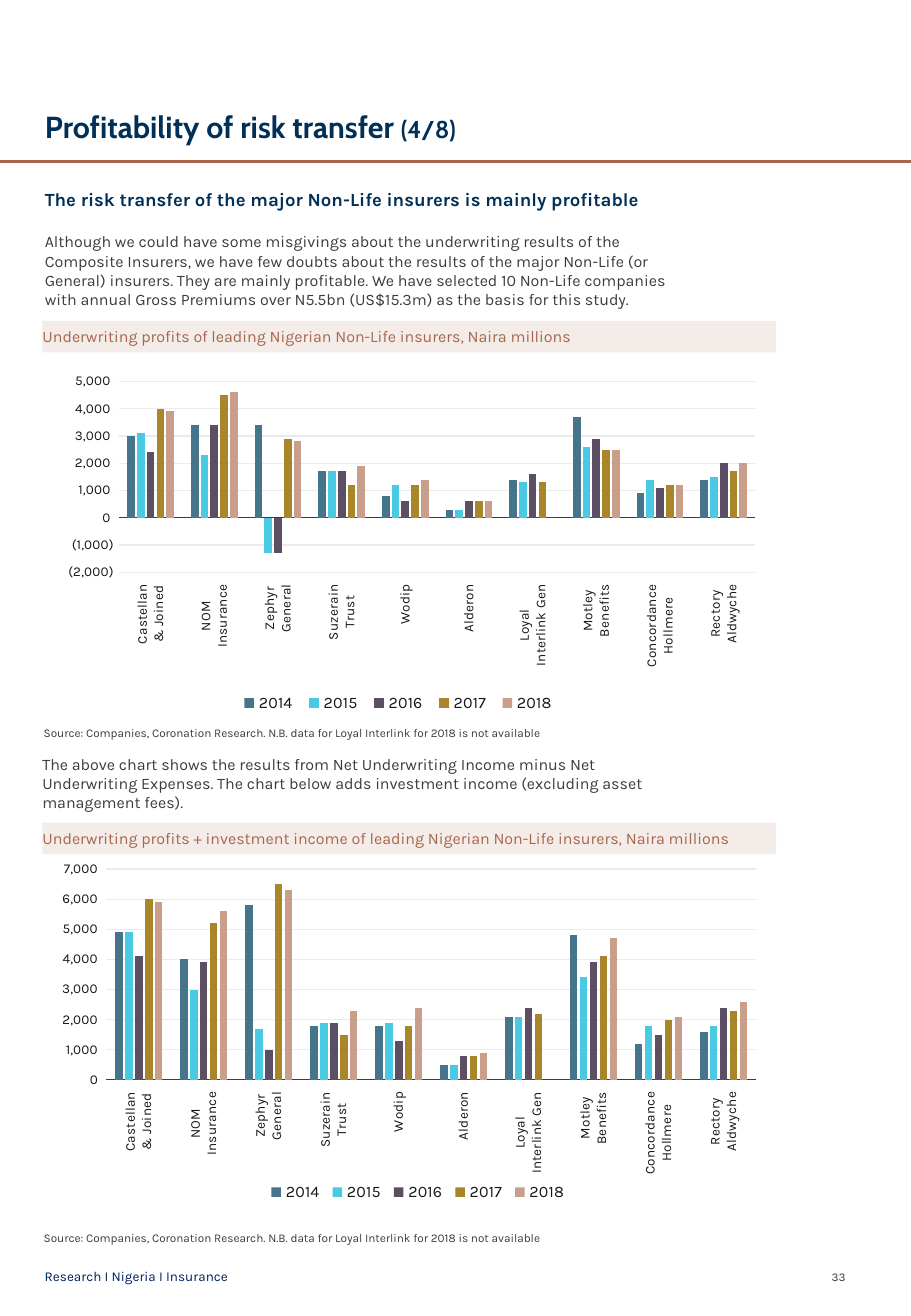
from dataclasses import dataclass
from typing import Optional

from lxml.etree import SubElement
from pptx import Presentation
from pptx.chart.data import CategoryChartData
from pptx.dml.color import RGBColor
from pptx.enum.chart import (XL_CHART_TYPE, XL_LEGEND_POSITION, XL_TICK_LABEL_POSITION,
                             XL_TICK_MARK)
from pptx.enum.shapes import MSO_CONNECTOR, MSO_SHAPE
from pptx.enum.text import MSO_ANCHOR, MSO_AUTO_SIZE, PP_ALIGN
from pptx.oxml.ns import qn
from pptx.util import Inches, Pt

NAVY, COPPER, BLUSH = "003057", "A7674C", "F4ECE8"
GREY, BLACK, GRID = "3A3C3E", "161617", "EAEBEB"
YEARS = ["2014", "2015", "2016", "2017", "2018"]
YEAR_COLORS = ["46758B", "4AC9E3", "5C4E63", "A98629", "C99F8B"]
INSURERS = ["Castellan\n& Joined", "NOM\nInsurance", "Zephyr\nGeneral", "Suzerain\nTrust",
            "Wodip", "Alderon", "Loyal\nInterlink Gen", "Motley\nBenefits",
            "Concordance\nHollmere", "Rectory\nAldwyche"]
SOURCE = ("Source: Companies, Coronation Research. "
          "N.B. data for Loyal Interlink for 2018 is not available")

Box = tuple[float, float, float, float]


@dataclass
class TextItem:
    text: str
    box: Box
    size: float = 9.5
    color: str = GREY
    bold: bool = False
    insets: Box = (0.1, 0.05, 0.1, 0.05)
    anchor: MSO_ANCHOR = MSO_ANCHOR.TOP
    align: PP_ALIGN = PP_ALIGN.LEFT
    fill: Optional[str] = None


@dataclass
class ProfitChart:
    box: Box
    low: int
    high: int
    plot: Box
    legend: Box
    values: list[list[Optional[int]]]


def rgb(color: str) -> RGBColor:
    return RGBColor.from_string(color)


def style_font(font, *, size: float, color: str, name: str = "Karla", bold: bool = False) -> None:
    font.size, font.name, font.bold = Pt(size), name, bold
    font.color.rgb = rgb(color)


def add_run(p, text: str, **fmt) -> None:
    r = p.add_run()
    r.text = text
    style_font(r.font, **fmt)


def set_frame(tf, insets: Box, anchor: MSO_ANCHOR) -> None:
    tf.word_wrap, tf.auto_size, tf.vertical_anchor = True, MSO_AUTO_SIZE.NONE, anchor
    tf.margin_left, tf.margin_top, tf.margin_right, tf.margin_bottom = map(Inches, insets)


def draw_text(s, item: TextItem) -> None:
    place = [Inches(v) for v in item.box]
    if item.fill:
        sp = s.shapes.add_shape(MSO_SHAPE.RECTANGLE, *place)
        sp.shadow.inherit = False
        sp.fill.solid()
        sp.fill.fore_color.rgb = rgb(item.fill)
        sp.line.fill.background()
    else:
        sp = s.shapes.add_textbox(*place)
    set_frame(sp.text_frame, item.insets, item.anchor)
    p = sp.text_frame.paragraphs[0]
    p.alignment = item.align
    add_run(p, item.text, size=item.size, color=item.color, bold=item.bold)


def manual_layout(parent, index: int, box: Box, inner: bool = False) -> None:
    for old in parent.findall(qn("c:layout")):
        parent.remove(old)
    layout = parent.makeelement(qn("c:layout"), {})
    parent.insert(index, layout)
    manual = SubElement(layout, qn("c:manualLayout"))
    if inner:
        SubElement(manual, qn("c:layoutTarget"), val="inner")
    for tag in ("xMode", "yMode"):
        SubElement(manual, qn(f"c:{tag}"), val="edge")
    for tag, value in zip("xywh", box):
        SubElement(manual, qn(f"c:{tag}"), val=str(value))


def draw_chart(s, spec: ProfitChart) -> None:
    data = CategoryChartData()
    data.categories = INSURERS
    for year, values in zip(YEARS, spec.values):
        data.add_series(year, values)
    chart = s.shapes.add_chart(XL_CHART_TYPE.COLUMN_CLUSTERED,
                               *[Inches(v) for v in spec.box], data).chart
    chart.has_title = False
    style_font(chart.font, size=10, color="75787B", name="Calibri")

    # Columns
    plot = chart.plots[0]
    plot.gap_width, plot.overlap, plot.vary_by_categories = 219, -27, False
    for series, color in zip(plot.series, YEAR_COLORS):
        series.invert_if_negative = False
        series.format.fill.solid()
        series.format.fill.fore_color.rgb = rgb(color)
    manual_layout(plot._element.getparent(), 0, spec.plot, inner=True)

    # Axes
    cat, val = chart.category_axis, chart.value_axis
    for axis in (cat, val):
        axis.major_tick_mark = axis.minor_tick_mark = XL_TICK_MARK.NONE
        style_font(axis.tick_labels.font, size=8, color=BLACK)
    cat.tick_label_position = XL_TICK_LABEL_POSITION.LOW
    cat.format.line.color.rgb = rgb(GREY)
    cat.format.line.width = Pt(0.75)
    body = cat._element.find(qn("c:txPr")).find(qn("a:bodyPr"))
    body.set("rot", "-5400000")
    body.set("vert", "horz")
    val.minimum_scale, val.maximum_scale, val.major_unit = spec.low, spec.high, 1000
    val.tick_labels.number_format = r"#,##0_);\(#,##0\)"
    val.tick_labels.number_format_is_linked = False
    val.format.line.fill.background()
    val.major_gridlines.format.line.color.rgb = rgb(GRID)
    val.major_gridlines.format.line.width = Pt(0.75)

    # Legend
    chart.has_legend = True
    chart.legend.position = XL_LEGEND_POSITION.BOTTOM
    chart.legend.include_in_layout = False
    style_font(chart.legend.font, size=9.5, color=BLACK)
    manual_layout(chart.legend._element, 1, spec.legend)


def heading(text: str, top: float) -> TextItem:
    return TextItem(text, (0.35, top, 6.04, 0.26), color=COPPER, fill=BLUSH,
                    insets=(0, 0.05, 0.1, 0.05))


def source(top: float) -> TextItem:
    return TextItem(SOURCE, (0.35, top, 6.85, 0.22), size=7, insets=(0.01, 0.05, 0.1, 0.05))


TEXTS = [
    TextItem("33", (6.63, 10.39, 0.43, 0.23), size=7, anchor=MSO_ANCHOR.MIDDLE,
             align=PP_ALIGN.RIGHT),
    TextItem("Research I Nigeria I Insurance", (0.27, 10.39, 2.53, 0.23), size=8,
             color="002060", anchor=MSO_ANCHOR.MIDDLE),
    TextItem("The risk transfer of the major Non-Life insurers is mainly profitable",
             (0.27, 1.5, 5.55, 0.29), size=11, color=NAVY, bold=True),
    TextItem("Although we could have some misgivings about the underwriting results of the "
             "Composite Insurers, we have few doubts about the results of the major Non-Life "
             "(or General) insurers. They are mainly profitable. We have selected 10 Non-Life "
             "companies with annual Gross Premiums over N5.5bn (US$15.3m) as the basis for "
             "this study.", (0.27, 1.86, 5.55, 0.74)),
    heading("Underwriting profits of leading Nigerian Non-Life insurers, Naira millions", 2.64),
    source(5.92),
    TextItem("The above chart shows the results from Net Underwriting Income minus Net "
             "Underwriting Expenses. The chart below adds investment income (excluding asset "
             "management fees).", (0.25, 6.16, 5.55, 0.58)),
    heading("Underwriting profits + investment income of leading Nigerian Non-Life insurers, "
            "Naira millions", 6.77),
    source(10.08),
]
CHARTS = [
    ProfitChart((0.35, 2.95, 6.04, 3.1), -2000, 5000, (0.104, 0.061, 0.868, 0.507),
                (0.26, 0.87, 0.45, 0.09), [
        [3000, 3400, 3400, 1700, 800, 300, 1400, 3700, 900, 1400],
        [3100, 2300, -1300, 1700, 1200, 300, 1300, 2600, 1400, 1500],
        [2400, 3400, -1300, 1700, 600, 600, 1600, 2900, 1100, 2000],
        [4000, 4500, 2900, 1200, 1200, 600, 1300, 2500, 1200, 1700],
        [3900, 4600, 2800, 1900, 1400, 600, 0, 2500, 1200, 2000]]),
    ProfitChart((0.3, 7.01, 6.04, 2.98), 0, 7000, (0.095, 0.048, 0.886, 0.582),
                (0.31, 0.9, 0.42, 0.08), [
        [4900, 4000, 5800, 1800, 1800, 500, 2100, 4800, 1200, 1600],
        [4900, 3000, 1700, 1900, 1900, 500, 2100, 3400, 1800, 1800],
        [4100, 3900, 1000, 1900, 1300, 800, 2400, 3900, 1500, 2400],
        [6000, 5200, 6500, 1500, 1800, 800, 2200, 4100, 2000, 2300],
        [5900, 5600, 6300, 2300, 2400, 900, None, 4700, 2100, 2600]]),
]


def main() -> None:
    prs = Presentation()
    prs.slide_width, prs.slide_height = Inches(7.5), Inches(10.83)
    s = prs.slides.add_slide(prs.slide_layouts[5])

    # Title and rule
    title = s.shapes.title
    title.left, title.top, title.width, title.height = map(Inches, (0.27, 0.9, 5.25, 0.32))
    set_frame(title.text_frame, (0.1, 0.05, 0.1, 0.05), MSO_ANCHOR.MIDDLE)
    p = title.text_frame.paragraphs[0]
    p.alignment, p.line_spacing = PP_ALIGN.LEFT, 0.9
    for text, size in (("Profitability of risk transfer ", 18), ("(4/8)", 14.4)):
        add_run(p, text, size=size, color=NAVY, name="Cabin", bold=True)
    rule = s.shapes.add_connector(MSO_CONNECTOR.STRAIGHT, 0, Inches(1.33),
                                  Inches(7.5), Inches(1.33))
    rule.line.color.rgb, rule.line.width = rgb(COPPER), Pt(1.5)
    SubElement(rule._element.spPr, qn("a:effectLst"))

    # Body
    for item in TEXTS:
        draw_text(s, item)
    for spec in CHARTS:
        draw_chart(s, spec)
    prs.save("out.pptx")


if __name__ == "__main__":
    main()
